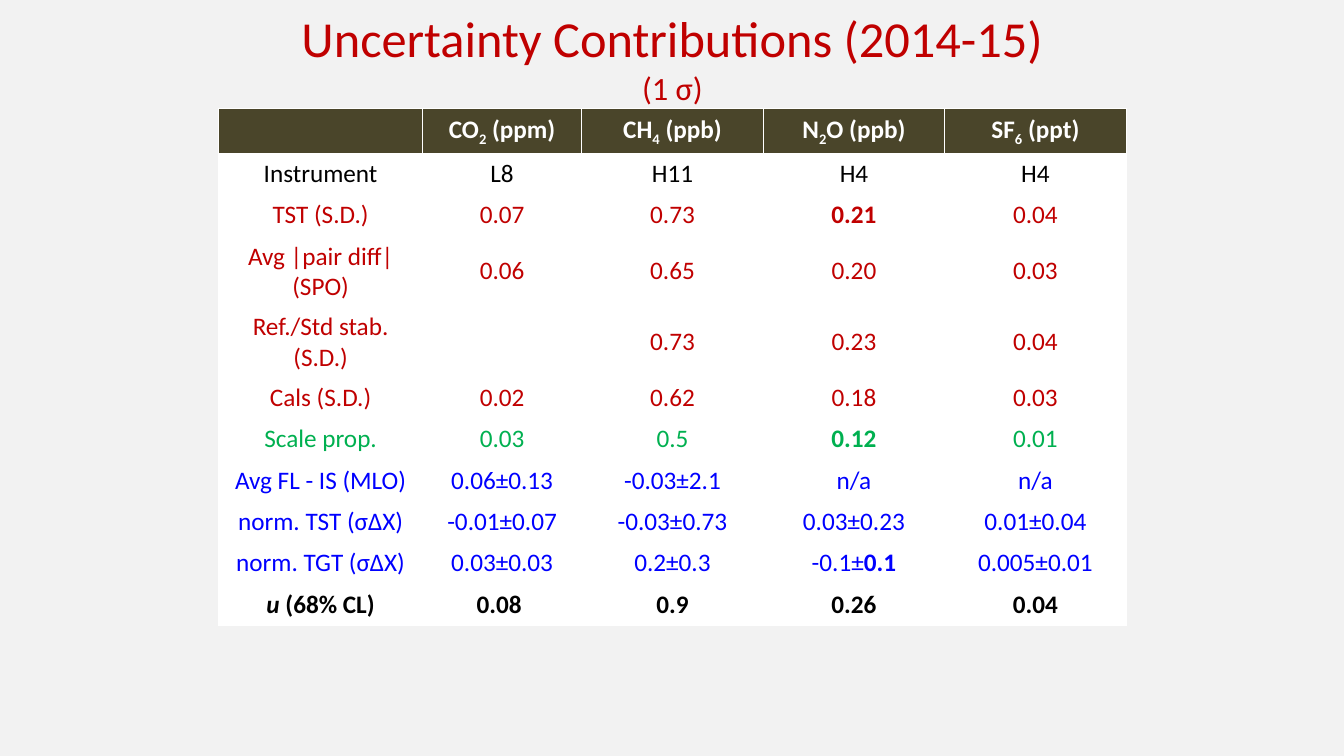
from pptx import Presentation
from pptx.dml.color import RGBColor
from pptx.enum.text import MSO_ANCHOR, PP_ALIGN
from pptx.util import Inches, Pt

CENTER = PP_ALIGN.CENTER
TOP = MSO_ANCHOR.TOP
MIDDLE = MSO_ANCHOR.MIDDLE

FONT = "Calibri"
COLORS = {
    "background": "F2F2F2",
    "header": "4A452A",
    "white": "FFFFFF",
    "black": "000000",
    "red": "C00000",
    "green": "00B050",
    "blue": "0000FF",
}

BOLD = {"bold": True}
SUBSCRIPT = {"subscript": True}

COLUMN_WIDTHS = [2.02, 1.58, 1.8, 1.8, 1.8]
ROW_HEIGHT = 0.41
HEADERS = [
    "",
    ["CO", ("2", SUBSCRIPT), " (ppm)"],
    ["CH", ("4", SUBSCRIPT), " (ppb)"],
    ["N", ("2", SUBSCRIPT), "O (ppb)"],
    ["SF", ("6", SUBSCRIPT), " (ppt)"],
]
ROWS = [
    ("black", ["Instrument", "L8", "H11", "H4", "H4"]),
    ("red", ["TST (S.D.)", "0.07", "0.73", [("0.21", BOLD)], "0.04"]),
    ("red", ["Avg |pair diff|\n(SPO)", "0.06", "0.65", "0.20", "0.03"]),
    ("red", ["Ref./Std stab. (S.D.)", "", "0.73", "0.23", "0.04"]),
    ("red", ["Cals (S.D.)", "0.02", "0.62", "0.18", "0.03"]),
    ("green", ["Scale prop.", "0.03", "0.5", [("0.12", BOLD)], "0.01"]),
    ("blue", ["Avg FL - IS (MLO)", "0.06±0.13", "-0.03±2.1", "n/a", "n/a"]),
    ("blue", ["norm. TST (σΔΧ)", "-0.01±0.07", "-0.03±0.73", "0.03±0.23", "0.01±0.04"]),
    ("blue", ["norm. TGT (σΔΧ)", "0.03±0.03", "0.2±0.3", ["-0.1±", ("0.1", BOLD)], "0.005±0.01"]),
    ("black", [[("u", {"italic": True}), " (68% CL)"], "0.08 ", "0.9", "0.26", "0.04"]),
]


def rgb(name):
    """Return the named colour."""
    return RGBColor.from_string(COLORS[name])


def add_run(paragraph, text, size=18, color="black", bold=False, italic=False, subscript=False):
    """Append one formatted run to a paragraph."""
    run = paragraph.add_run()
    run.text = text
    font = run.font
    font.name = FONT
    font.size = Pt(size)
    font.bold = bold
    font.italic = italic
    font.color.rgb = rgb(color)
    if subscript:
        run._r.get_or_add_rPr().set("baseline", "-25000")


def write_text(frame, content, **style):
    """Write centred text, given as a string of lines or as a list of runs."""
    lines = [[line] for line in content.split("\n")] if isinstance(content, str) else [content]
    for index, runs in enumerate(lines):
        paragraph = frame.add_paragraph() if index else frame.paragraphs[0]
        paragraph.alignment = CENTER
        for run in runs:
            text, changes = (run, {}) if isinstance(run, str) else run
            if text:
                add_run(paragraph, text, **{**style, **changes})


def add_title(slide, left, top, width, height):
    """Place the heading and its sigma note in the given box."""
    box = slide.shapes.add_textbox(Inches(left), Inches(top), Inches(width), Inches(height))
    frame = box.text_frame
    frame.word_wrap = True
    frame.vertical_anchor = TOP
    frame.margin_top = Inches(0.07)
    write_text(frame, "Uncertainty Contributions (2014-15)", size=36, color="red")
    paragraph = frame.paragraphs[0]
    paragraph.add_line_break()
    add_run(paragraph, "(1 σ)", size=23.2, color="red")


def add_uncertainty_table(slide, left, top):
    """Place the table of uncertainty contributions at the given corner."""
    row_count = len(ROWS) + 1
    frame = slide.shapes.add_table(
        row_count, len(COLUMN_WIDTHS), Inches(left), Inches(top),
        Inches(sum(COLUMN_WIDTHS)), Inches(ROW_HEIGHT * row_count))
    table = frame.table
    table.horz_banding = False
    for column, width in zip(table.columns, COLUMN_WIDTHS):
        column.width = Inches(width)
    for index, (color, contents) in enumerate([("white", HEADERS)] + ROWS):
        is_header = index == 0
        bold = is_header or index == row_count - 1
        table.rows[index].height = Inches(ROW_HEIGHT)
        for cell, content in zip(table.rows[index].cells, contents):
            cell.fill.solid()
            cell.fill.fore_color.rgb = rgb("header" if is_header else "white")
            cell.vertical_anchor = MIDDLE
            write_text(cell.text_frame, content, color=color, bold=bold)


def main():
    """Build and save the presentation."""
    presentation = Presentation()
    presentation.slide_width = Inches(13.33)
    presentation.slide_height = Inches(7.5)
    slide = presentation.slides.add_slide(presentation.slide_layouts[6])
    slide.background.fill.solid()
    slide.background.fill.fore_color.rgb = rgb("background")
    add_title(slide, 2.17, 0, 9, 0.95)
    add_uncertainty_table(slide, 2.17, 1.08)
    presentation.save("out.pptx")


if __name__ == "__main__":
    main()
